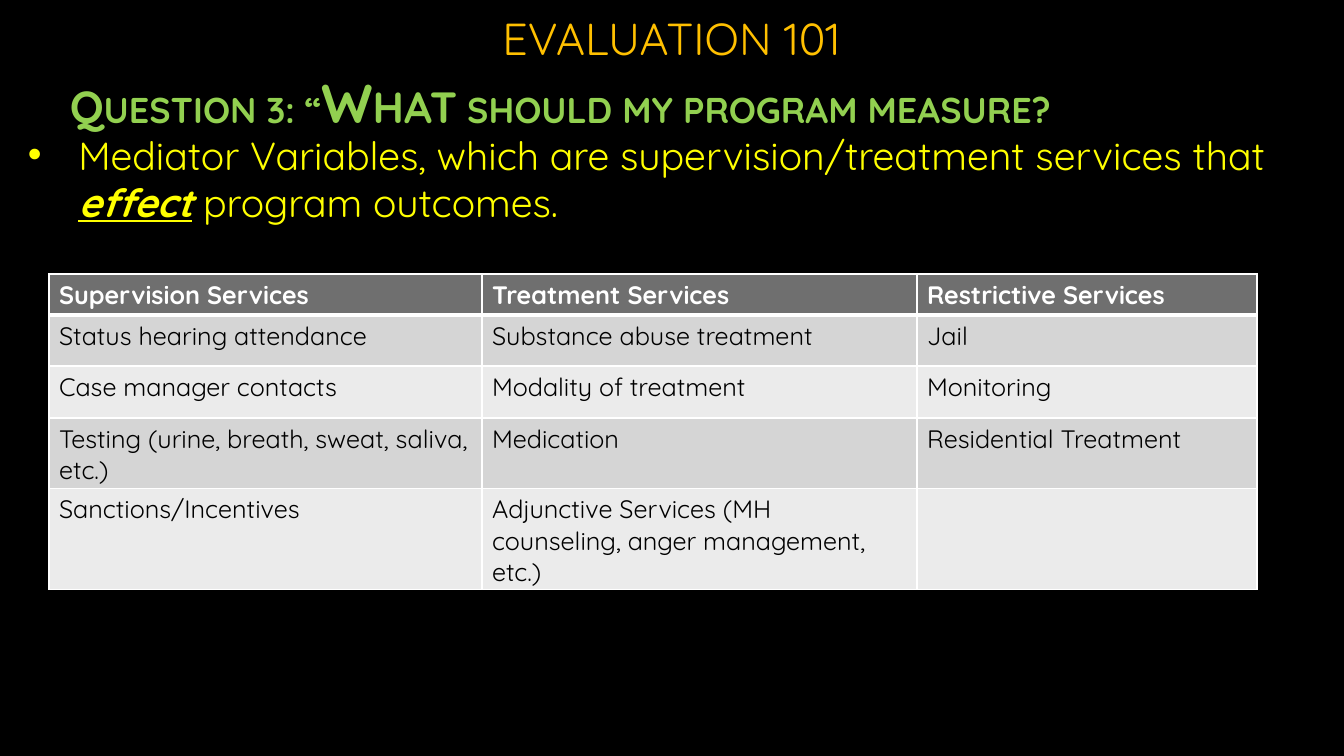
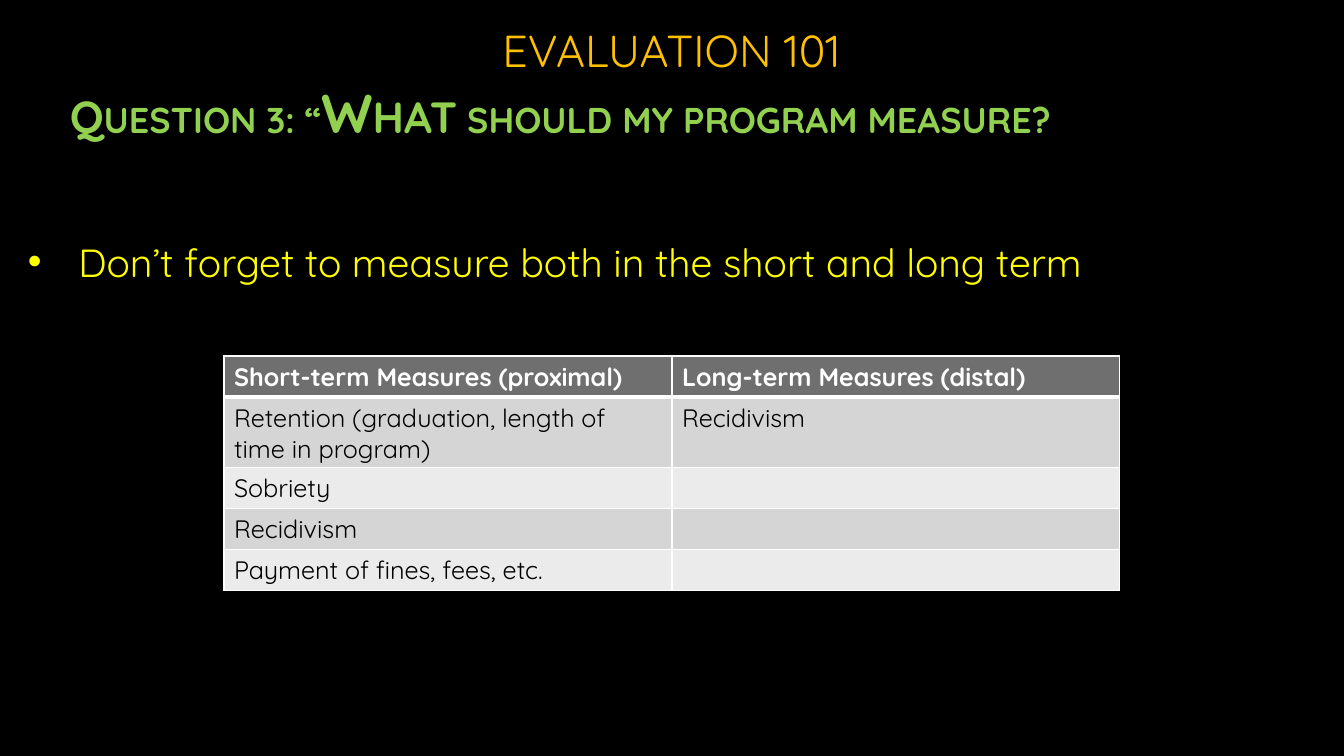
from lxml import etree
from pptx import Presentation
from pptx.dml.color import RGBColor
from pptx.enum.text import MSO_ANCHOR, PP_ALIGN
from pptx.oxml.ns import qn
from pptx.util import Pt

EMU_PER_PX = 914400 / 100.8
FONT = "Quicksand"
BLACK = RGBColor(0x00, 0x00, 0x00)
WHITE = RGBColor(0xFF, 0xFF, 0xFF)
AMBER = RGBColor(0xFF, 0xC0, 0x00)
GREEN = RGBColor(0x92, 0xD0, 0x50)
YELLOW = RGBColor(0xFF, 0xFF, 0x00)
HEADER_GRAY = RGBColor(0x6F, 0x6F, 0x6F)
BAND_GRAYS = (RGBColor(0xD5, 0xD5, 0xD5), RGBColor(0xEB, 0xEB, 0xEB))
CENTER = PP_ALIGN.CENTER
BOTTOM = MSO_ANCHOR.BOTTOM

TITLE = "EVALUATION 101"
QUESTION = [("Question 3: “", 32), ("What", 39), (" should my program measure?", 32)]

SLIDES = [
    {
        "title_top": 5,
        "question_top": 64,
        "bullet_box": (126, 105),
        "bullet": [
            ("Mediator Variables, which are supervision/treatment services that ", False),
            ("effect", True),
            (" program outcomes.", False),
        ],
        "table_at": (49, 274),
        "columns": [433, 435, 340],
        "heights": [41, 51, 52, 70, 101],
        "rows": [
            ["Supervision Services", "Treatment Services", "Restrictive Services"],
            ["Status hearing attendance", "Substance abuse treatment", "Jail"],
            ["Case manager contacts", "Modality of treatment", "Monitoring"],
            ["Testing (urine, breath, sweat, saliva, etc.)", "Medication", "Residential Treatment"],
            ["Sanctions/Incentives", "Adjunctive Services (MH counseling, anger management, etc.)", ""],
        ],
    },
    {
        "title_top": 17,
        "question_top": 74,
        "bullet_box": (233, 57),
        "bullet": [("Don’t forget to measure both in the short and long term", False)],
        "table_at": (224, 356),
        "columns": [448, 448],
        "heights": [41, 70, 41, 41, 41],
        "rows": [
            ["Short-term Measures (proximal)", "Long-term Measures (distal)"],
            ["Retention (graduation, length of time in program)", "Recidivism"],
            ["Sobriety", ""],
            ["Recidivism", ""],
            ["Payment of fines, fees, etc.", ""],
        ],
    },
]


def px(*lengths):
    return [round(length * EMU_PER_PX) for length in lengths]


def add_text(page, left, top, width, height, color):
    box = page.shapes.add_textbox(*px(left, top, width, height))
    box.text_frame.word_wrap = True
    para = box.text_frame.paragraphs[0]
    para.font.name = FONT
    para.font.color.rgb = color
    return box.text_frame, para


deck = Presentation()
deck.slide_width, deck.slide_height = px(1344, 756)
background = deck.slide_master.background.fill
background.solid()
background.fore_color.rgb = BLACK

for content in SLIDES:
    page = deck.slides.add_slide(deck.slide_layouts[6])

    frame, para = add_text(page, 193, content["title_top"], 957, 64, AMBER)
    frame.vertical_anchor = BOTTOM
    para.alignment = CENTER
    para.font.size = Pt(32)
    para.add_run().text = TITLE

    frame, para = add_text(page, 60, content["question_top"], 1223, 86, GREEN)
    para.font.bold = True
    for text, size in QUESTION:
        span = para.add_run()
        span.text = text
        span.font.size = Pt(size)
        span._r.get_or_add_rPr().set("cap", "small")

    top, height = content["bullet_box"]
    frame, para = add_text(page, 18, top, 1305, height, YELLOW)
    para.font.size = Pt(28)
    for text, stressed in content["bullet"]:
        span = para.add_run()
        span.text = text
        if stressed:
            span.font.bold = span.font.italic = span.font.underline = True
    properties = para._p.get_or_add_pPr()
    properties.set("marL", "457200")
    properties.set("indent", "-457200")
    bullet_font = etree.Element(qn("a:buFont"), typeface="Arial")
    bullet_mark = etree.Element(qn("a:buChar"), char="•")
    properties.insert(0, bullet_font)
    properties.insert(1, bullet_mark)

    columns, heights, rows = content["columns"], content["heights"], content["rows"]
    table = page.shapes.add_table(
        len(rows), len(columns), *px(*content["table_at"], sum(columns), sum(heights))
    ).table
    for column, width in zip(table.columns, px(*columns)):
        column.width = width
    for row, height in zip(table.rows, px(*heights)):
        row.height = height

    for row_index, texts in enumerate(rows):
        is_header = row_index == 0
        for column_index, text in enumerate(texts):
            cell = table.cell(row_index, column_index)
            cell.text = text
            para = cell.text_frame.paragraphs[0]
            para.font.name = FONT
            para.font.size = Pt(18)
            para.font.bold = is_header
            para.font.color.rgb = WHITE if is_header else BLACK

            cell_properties = cell._tc.get_or_add_tcPr()
            for side in ("L", "R", "T", "B"):
                thick = (is_header and side == "B") or (row_index == 1 and side == "T")
                line = etree.SubElement(cell_properties, qn(f"a:ln{side}"), w=str(Pt(3 if thick else 1)))
                solid = etree.SubElement(line, qn("a:solidFill"))
                etree.SubElement(solid, qn("a:srgbClr"), val=str(WHITE))
            cell.fill.solid()
            cell.fill.fore_color.rgb = HEADER_GRAY if is_header else BAND_GRAYS[(row_index - 1) % 2]

deck.save("out.pptx")
